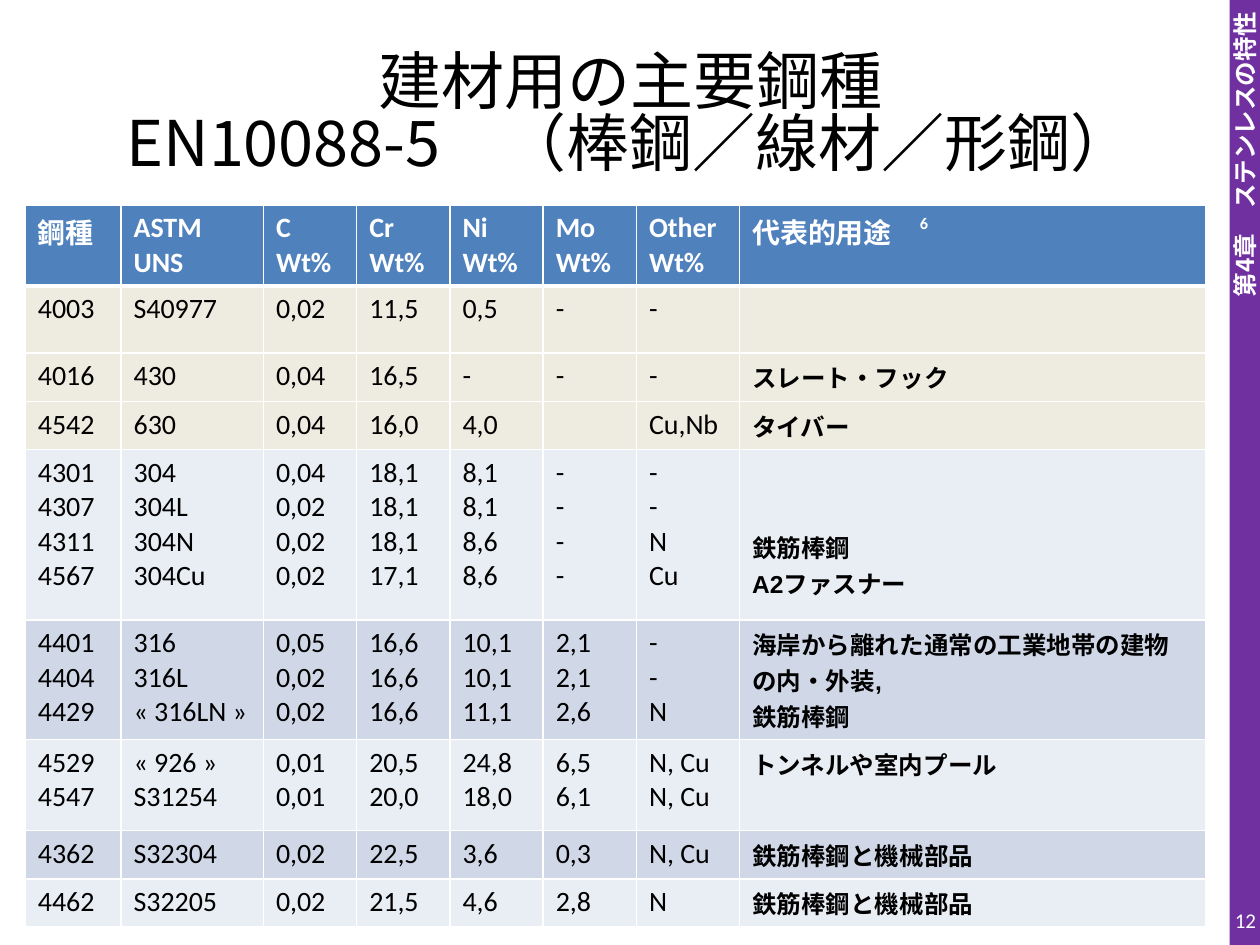
"""Build the slide listing the main stainless bar, rod and section grades for construction."""
from lxml import etree
from pptx import Presentation
from pptx import util as u
from pptx.dml.color import RGBColor
from pptx.enum import shapes, text
from pptx.oxml import ns

CJK, LATIN, LATIN_USE = "Noto Sans CJK JP", "Calibri", "Arial"
WHITE, BLACK, PURPLE, BLUE = "FFFFFF", "000000", "7030A0", "4F81BD"
BEIGE, PALE, MID = "EEECE1", "E9EDF4", "D0D8E8"

TITLE = ["建材用の主要鋼種", "EN10088-5\u3000（棒鋼／線材／形鋼）"]
CHAPTER = "第4章\u3000ステンレスの特性"
PAGE = "12"
NOTE = "6"
HEADER = ["鋼種", "ASTM\nUNS", "C\nWt%", "Cr\nWt%", "Ni\nWt%", "Mo\nWt%", "Other\nWt%", "代表的用途\u3000"]
COLUMNS = [1.93, 2.87, 1.88, 1.88, 1.88, 1.88, 2.08, 9.4]
HEADER_HEIGHT = 1.45
GROUPS = [
    (1.35, BEIGE, ["4003", "S40977", "0,02", "11,5", "0,5", "-", "-", ""]),
    (0.89, BEIGE, ["4016", "430", "0,04", "16,5", "-", "-", "-", "スレート・フック"]),
    (0.89, BEIGE, ["4542", "630", "0,04", "16,0", "4,0", "", "Cu,Nb", "タイバー"]),
    (3.43, PALE, ["4301\n4307\n4311\n4567", "304\n304L\n304N\n304Cu", "0,04\n0,02\n0,02\n0,02",
                  "18,1\n18,1\n18,1\n17,1", "8,1\n8,1\n8,6\n8,6", "-\n-\n-\n-", "-\n-\nN\nCu",
                  "鉄筋棒鋼\nA2ファスナー"]),
    (2.31, MID, ["4401\n4404\n4429", "316\n316L\n«\u00a0316LN\u00a0»", "0,05\n0,02\n0,02",
                 "16,6\n16,6\n16,6", "10,1\n10,1\n11,1", "2,1\n2,1\n2,6", "-\n-\nN",
                 "海岸から離れた通常の工業地帯の建物の内・外装,\n鉄筋棒鋼"]),
    (1.83, PALE, ["4529\n4547", "«\u00a0926\u00a0»\nS31254", "0,01\n0,01", "20,5\n20,0",
                  "24,8\n18,0", "6,5\n6,1", "N, Cu\nN, Cu", "トンネルや室内プール"]),
    (0.89, MID, ["4362", "S32304", "0,02", "22,5", "3,6", "0,3", "N, Cu", "鉄筋棒鋼と機械部品"]),
    (0.89, PALE, ["4462", "S32205", "0,02", "21,5", "4,6", "2,8", "N", "鉄筋棒鋼と機械部品"]),
]
USE_COLUMN, REBAR_ROW, REBAR_TOP = len(COLUMNS) - 1, 4, 1.6


def color(value):
    return RGBColor.from_string(value)


def box(left, top, width, height):
    return [u.Cm(v) for v in (left, top, width, height)]


def add_run(p, words, size, font, fill, bold=False):
    r = p.add_run()
    r.text = words
    r.font.size, r.font.name, r.font.bold = u.Pt(size), font, bold
    r.font.color.rgb = color(fill)
    etree.SubElement(r._r.get_or_add_rPr(), ns.qn("a:ea"), typeface=CJK)
    return r


def add_lines(tf, words, size, *style):
    for i, line in enumerate(words.split("\n")):
        p = tf.add_paragraph() if i else tf.paragraphs[0]
        if line:
            add_run(p, line, size, *style)
        else:
            etree.SubElement(p._p, ns.qn("a:endParaRPr"), sz=str(size * 100))


def set_borders(cell, widths):
    tc_pr = cell._tc.get_or_add_tcPr()
    for side, width in widths.items():
        ln = etree.SubElement(tc_pr, ns.qn(f"a:ln{side}"), w=str(u.Pt(width)))
        fill = etree.SubElement(ln, ns.qn("a:solidFill"))
        etree.SubElement(fill, ns.qn("a:srgbClr"), val=WHITE)


def add_sidebar(s):
    sp = s.shapes.add_shape(shapes.MSO_SHAPE.RECTANGLE, *box(24.79, 0, 0.61, 19.05))
    sp.shadow.inherit = False
    sp.fill.solid()
    sp.fill.fore_color.rgb = color(PURPLE)
    sp.line.fill.background()
    tf = sp.text_frame
    tf.vertical_anchor = text.MSO_ANCHOR.MIDDLE
    tf._txBody.bodyPr.set("vert", "vert270")
    p = tf.paragraphs[0]
    p.alignment = text.PP_ALIGN.RIGHT
    add_run(p, CHAPTER, 14, CJK, WHITE, True)


def add_title(s):
    sp = s.shapes.title
    sp.left, sp.top, sp.width, sp.height = box(1.27, 0.76, 22.86, 3.18)
    tf = sp.text_frame
    tf.vertical_anchor = text.MSO_ANCHOR.MIDDLE
    p = tf.paragraphs[0]
    p.alignment, p.line_spacing = text.PP_ALIGN.CENTER, 0.82
    for i, line in enumerate(TITLE):
        if i:
            p.add_line_break()
        add_run(p, line, 36, CJK, BLACK)


def add_grades(s):
    rows = [(HEADER_HEIGHT, BLUE, HEADER)] + GROUPS
    size = box(0.51, 4.13, sum(COLUMNS), sum(row[0] for row in rows))
    table = s.shapes.add_table(len(rows), len(COLUMNS), *size).table
    table.horz_banding = False
    for column, width in zip(table.columns, COLUMNS):
        column.width = u.Cm(width)
    for i, (height, fill, values) in enumerate(rows):
        table.rows[i].height = u.Cm(height)
        for j, words in enumerate(values):
            cell = table.cell(i, j)
            set_borders(cell, {"L": 1, "R": 1, "T": 3 if i == 1 else 1, "B": 3 if i == 0 else 1})
            cell.fill.solid()
            cell.fill.fore_color.rgb = color(fill)
            if i == 0:
                style = (16, LATIN, WHITE, True)
            elif j == USE_COLUMN:
                style = (14, LATIN_USE, BLACK, True)
            else:
                style = (16, LATIN, BLACK)
            add_lines(cell.text_frame, words, *style)
    table.cell(REBAR_ROW, USE_COLUMN).margin_top = u.Cm(REBAR_TOP)
    note = add_run(table.cell(0, USE_COLUMN).text_frame.paragraphs[0], NOTE, 16, LATIN, WHITE, True)
    note._r.get_or_add_rPr().set("baseline", "50000")


def add_page_number(s):
    tf = s.shapes.add_textbox(*box(23.72, 18.03, 1.6, 1.02)).text_frame
    tf.word_wrap = True
    tf.vertical_anchor = text.MSO_ANCHOR.MIDDLE
    tf.margin_left = tf.margin_right = tf.margin_top = tf.margin_bottom = 0
    p = tf.paragraphs[0]
    p.alignment = text.PP_ALIGN.RIGHT
    add_run(p, PAGE, 12, LATIN, WHITE)


def main():
    prs = Presentation()
    prs.slide_width, prs.slide_height = u.Cm(25.4), u.Cm(19.05)
    s = prs.slides.add_slide(prs.slide_layouts[5])
    for add_part in (add_sidebar, add_title, add_grades, add_page_number):
        add_part(s)
    prs.save("out.pptx")


if __name__ == "__main__":
    main()
